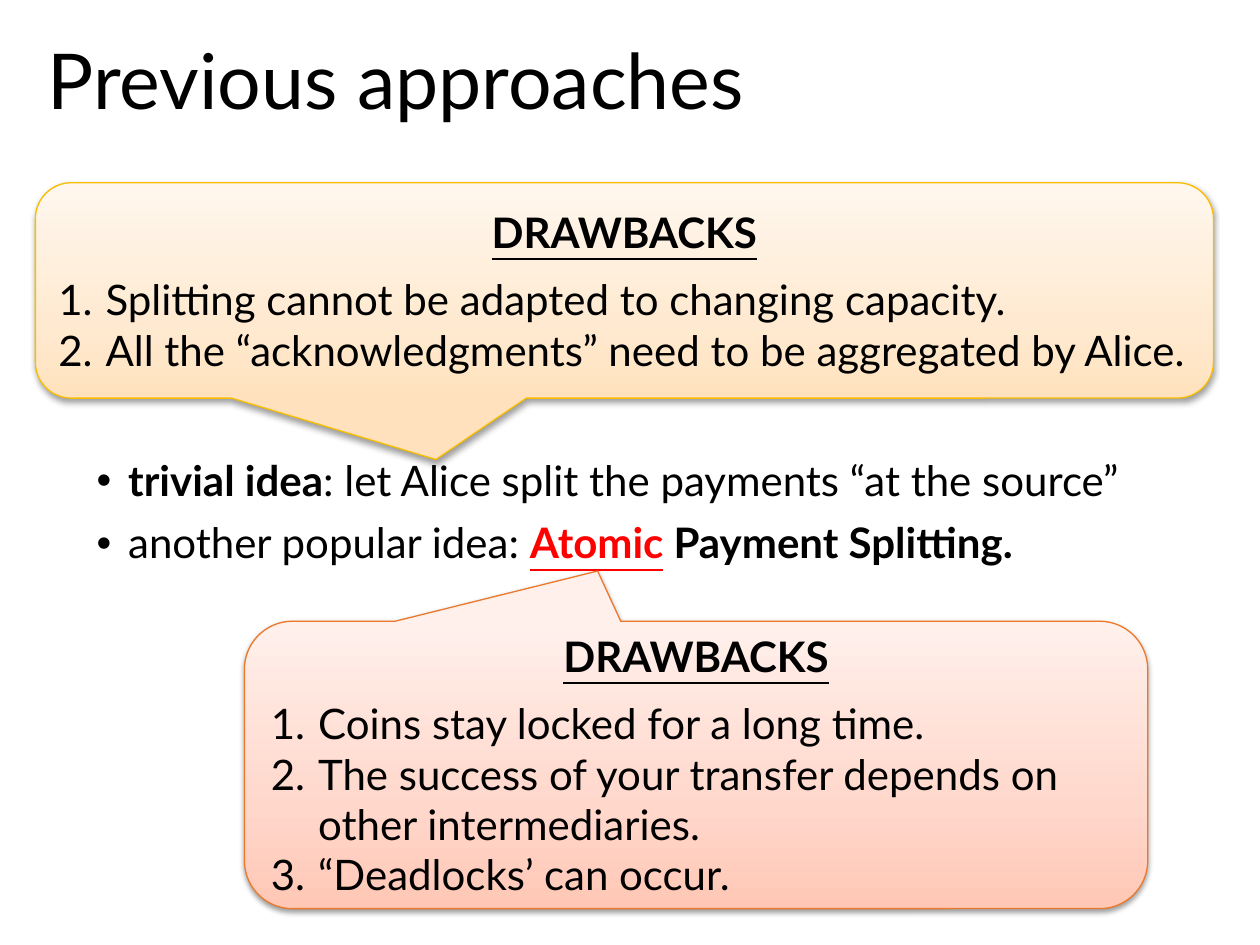
"""Build the slide on drawbacks of previous payment-splitting approaches."""
from copy import deepcopy

from lxml.etree import SubElement
from pptx import Presentation
from pptx.dml.color import RGBColor
from pptx.enum.shapes import MSO_SHAPE
from pptx.enum.text import MSO_ANCHOR, PP_ALIGN
from pptx.oxml.ns import qn
from pptx.util import Pt

COLORS = {
    "text": "000000", "accent": "FF0000", "shadow": "000000",
    "amber_line": "F9BC00", "amber_0": "FFE2BD", "amber_35": "FFEAD1", "amber_100": "FFF7EE",
    "coral_line": "EC792B", "coral_0": "FFC7B6", "coral_35": "FFD7CB", "coral_100": "FFF0EB",
}
HEADING = {"bold": True, "underline": True}
STOPS = (0, 35, 100)


def add_line(frame, pieces, size=24, color="text", **layout):
    line = frame.paragraphs[0]
    if line.runs:
        line = frame.add_paragraph()
    for name, value in layout.items():
        setattr(line, name, value)
    for words, style in pieces:
        run = line.add_run()
        run.text = words
        style = {"name": "Lato", "size": Pt(size), **style}
        run.font.color.rgb = RGBColor.from_string(COLORS[style.pop("color", color)])
        for name, value in style.items():
            setattr(run.font, name, value)
    return line


def add_marker(line, indent, tag, **values):
    properties = line._p.get_or_add_pPr()
    properties.set("marL", str(Pt(indent)))
    properties.set("indent", str(-Pt(indent)))
    SubElement(properties, qn("a:buFont"), typeface="Arial" if tag == "a:buChar" else "+mj-lt")
    SubElement(properties, qn(tag), **values)


deck = Presentation()
deck.slide_width, deck.slide_height = Pt(720), Pt(540)
slide = deck.slides.add_slide(deck.slide_layouts[6])

title = slide.shapes.add_textbox(Pt(20.2), Pt(20.9), Pt(686), Pt(62)).text_frame
title.word_wrap = True
add_line(title, [("Previous approaches", {})], size=44, line_spacing=0.9)

ideas = slide.shapes.add_textbox(Pt(48.2), Pt(259.2), Pt(629), Pt(78)).text_frame
ideas.word_wrap = True
for idea in (
    [("trivial idea", {"bold": True}),
     (": let Alice split the payments “at the source”", {})],
    [("another popular idea: ", {}),
     ("Atomic", {**HEADING, "color": "accent"}),
     (" Payment Splitting.", {"bold": True})],
):
    bullet = add_line(ideas, idea, line_spacing=0.9, space_before=Pt(10))
    add_marker(bullet, 18, "a:buChar", char="•")

CALLOUTS = (
    ("amber", (20.2, 104.4, 673.2, 123.1), (-0.16, 0.785, 0.167),
     ("Splitting cannot be adapted to changing capacity.",
      "All the “acknowledgments” need to be aggregated by Alice.")),
    ("coral", (139.7, 355, 516.2, 164.2), (-0.109, -0.675, 0.167),
     ("Coins stay locked for a long time.",
      "The success of your transfer depends on other intermediaries.",
      "“Deadlocks’ can occur.")),
)
for hue, box, pointer, drawbacks in CALLOUTS:
    callout = slide.shapes.add_shape(
        MSO_SHAPE.ROUNDED_RECTANGULAR_CALLOUT, *[Pt(length) for length in box])
    for index, value in enumerate(pointer):
        callout.adjustments[index] = value
    callout.line.color.rgb = RGBColor.from_string(COLORS[f"{hue}_line"])
    callout.line.width = Pt(0.75)

    callout.fill.gradient()
    callout.fill.gradient_angle = 90
    stop_list = callout._element.spPr.find(f".//{qn('a:gsLst')}")
    stop_list.append(deepcopy(stop_list[-1]))
    for stop, position in zip(callout.fill.gradient_stops, STOPS):
        stop.position = position / 100
        stop.color.rgb = RGBColor.from_string(COLORS[f"{hue}_{position}"])

    callout.shadow.inherit = False
    effects = callout._element.spPr.find(qn("a:effectLst"))
    shadow = SubElement(effects, qn("a:outerShdw"), blurRad=str(Pt(3.1)),
                        dist=str(Pt(1.6)), dir="5400000", rotWithShape="0")
    shade = SubElement(shadow, qn("a:srgbClr"), val=COLORS["shadow"])
    SubElement(shade, qn("a:alpha"), val="38000")

    frame = callout.text_frame
    frame.word_wrap = True
    frame.vertical_anchor = MSO_ANCHOR.MIDDLE
    add_line(frame, [("DRAWBACKS", HEADING)], alignment=PP_ALIGN.CENTER, space_after=Pt(9.6))
    for drawback in drawbacks:
        item = add_line(frame, [(drawback, {})], alignment=PP_ALIGN.LEFT)
        add_marker(item, 27, "a:buAutoNum", type="arabicPeriod")

deck.save("out.pptx")
